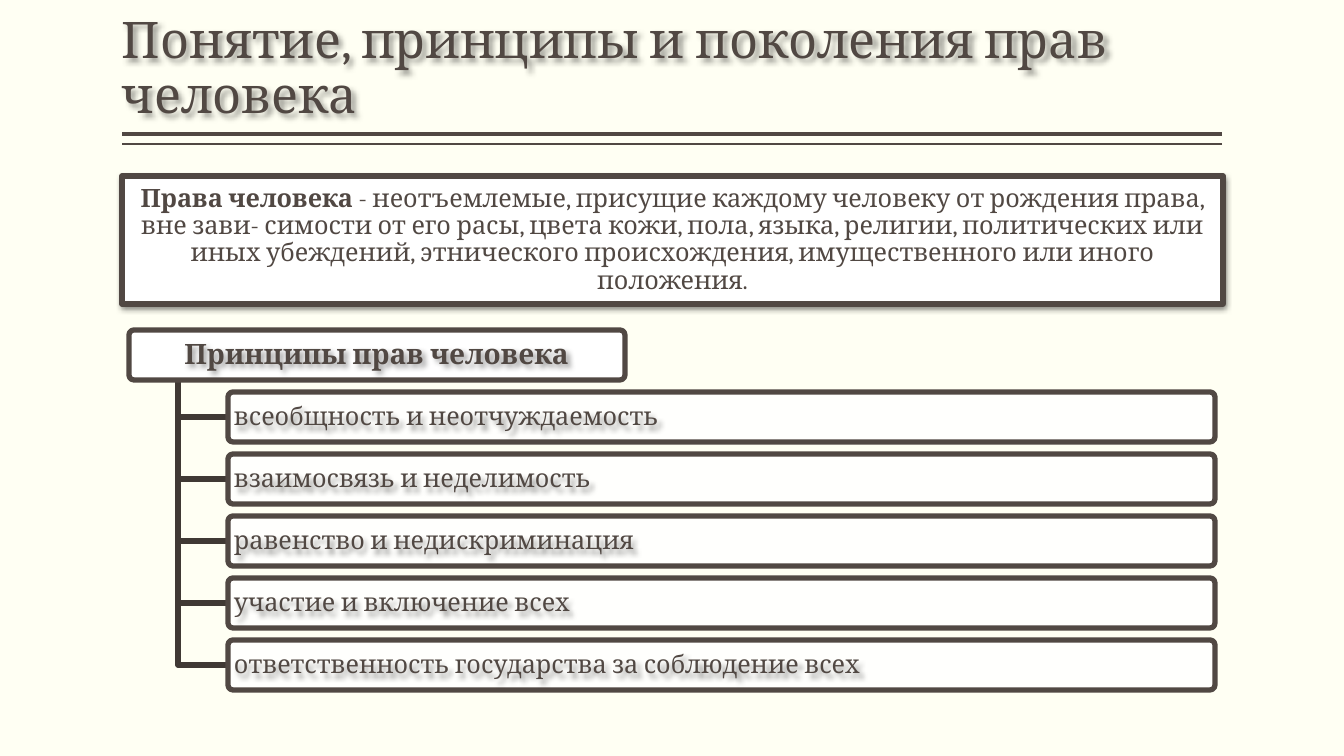
from lxml import etree
from pptx import Presentation
from pptx.dml.color import RGBColor
from pptx.enum.shapes import MSO_CONNECTOR as CONN, MSO_SHAPE as SHAPE
from pptx.enum.text import MSO_ANCHOR as ANCHOR, PP_ALIGN as ALIGN
from pptx.oxml import parse_xml
from pptx.oxml.ns import qn
from pptx.util import Pt

PX = 9071
INK = RGBColor.from_string("514843")
ELBOW = RGBColor.from_string("403934")
WHITE = RGBColor.from_string("FFFFFF")
NS = "http://schemas.openxmlformats.org/drawingml/2006/main"


def write(sp, runs, size, anchor, align, inset_x, inset_y):
    tf = sp.text_frame
    tf.word_wrap = True
    tf.vertical_anchor = anchor
    tf.margin_left = tf.margin_right = inset_x * PX
    tf.margin_top = tf.margin_bottom = inset_y * PX
    p = tf.paragraphs[0]
    p.alignment = align
    p.line_spacing = 0.9
    p.font.size = Pt(size)
    p.font.name = "Cambria"
    p.font.color.rgb = INK
    for text, bold in runs:
        r = p.add_run()
        r.text = text
        r.font.bold = bold


def cast_shadow(sp, blur, dist, angle, alpha):
    sp.shadow.inherit = False
    effects = sp._element.spPr.find(qn("a:effectLst"))
    effects.append(parse_xml(
        f'<a:outerShdw xmlns:a="{NS}" blurRad="{Pt(blur)}" dist="{Pt(dist)}" '
        f'dir="{angle * 60000}" algn="ctr" rotWithShape="0"><a:srgbClr val="000000">'
        f'<a:alpha val="{alpha * 1000}"/></a:srgbClr></a:outerShdw>'))


prs = Presentation()
prs.slide_width, prs.slide_height = 1344 * PX, 756 * PX
s = prs.slides.add_slide(prs.slide_layouts[6])
s.background.fill.solid()
s.background.fill.fore_color.rgb = RGBColor.from_string("FFFFF3")

for y, width in [(134, 3), (144, 1)]:
    rule = s.shapes.add_connector(CONN.STRAIGHT, 1222 * PX, y * PX, 122 * PX, y * PX)
    rule.line.color.rgb = INK
    rule.line.width = Pt(width)
    etree.SubElement(rule._element.spPr, qn("a:effectLst"))

title = s.shapes.add_textbox(122 * PX, 8 * PX, 1101 * PX, 121 * PX)
write(title, [("Понятие, принципы и поколения прав человека", False)],
      36, ANCHOR.BOTTOM, ALIGN.LEFT, 0, 5)
cast_shadow(title, 4, 3, 45, 40)

principles = [
    "всеобщность и неотчуждаемость",
    "взаимосвязь и неделимость",
    "равенство и недискриминация",
    "участие и включение всех",
    "ответственность государства за соблюдение всех",
]
rows = [(392 + 62 * i, text) for i, text in enumerate(principles)]

for y, text in rows:
    fb = s.shapes.build_freeform(178 * PX, 380 * PX)
    fb.add_line_segments([(178 * PX, (y + 25) * PX), (228 * PX, (y + 25) * PX)], close=False)
    elbow = fb.convert_to_shape()
    elbow.fill.background()
    elbow.line.color.rgb = ELBOW
    elbow.line.width = Pt(3.78)
    elbow.shadow.inherit = False

boxes = [(SHAPE.RECTANGLE, 122, 176, 1101, 128), (SHAPE.ROUNDED_RECTANGLE, 129, 330, 496, 50)]
boxes += [(SHAPE.ROUNDED_RECTANGLE, 228, y, 987, 50) for y, text in rows]
for kind, x, y, w, h in boxes:
    box = s.shapes.add_shape(kind, x * PX, y * PX, w * PX, h * PX)
    box.fill.solid()
    box.fill.fore_color.rgb = WHITE
    box.line.color.rgb = INK
    box.line.width = Pt(3.78)
    box.shadow.inherit = False
    if kind == SHAPE.RECTANGLE:
        cast_shadow(box, 4.5, 1.5, 90, 50)
        write(box, [
            ("Права человека ", True),
            ("- неотъемлемые, присущие каждому человеку от рождения права, вне зави- симости "
             "от его расы, цвета кожи, пола, языка, религии, политических или иных убеждений, "
             "этнического происхождения, имущественного или иного положения.", False),
        ], 18, ANCHOR.MIDDLE, ALIGN.CENTER, 1, 1)
    else:
        box.adjustments[0] = 0.1
    if x == 228:
        color = box.fill._xPr.find(qn("a:solidFill"))[0]
        etree.SubElement(color, qn("a:alpha"), val="90000")

labels = [(130, 332, 493, "Принципы прав человека", 20, True, ALIGN.CENTER, 3)]
labels += [(230, y + 2, 984, text, 18, False, ALIGN.LEFT, 2) for y, text in rows]
for x, y, w, text, size, bold, align, inset_y in labels:
    label = s.shapes.add_textbox(x * PX, y * PX, w * PX, 46 * PX)
    write(label, [(text, bold)], size, ANCHOR.MIDDLE, align, 4, inset_y)
    cast_shadow(label, 4, 3, 45, 40)

prs.save("out.pptx")
